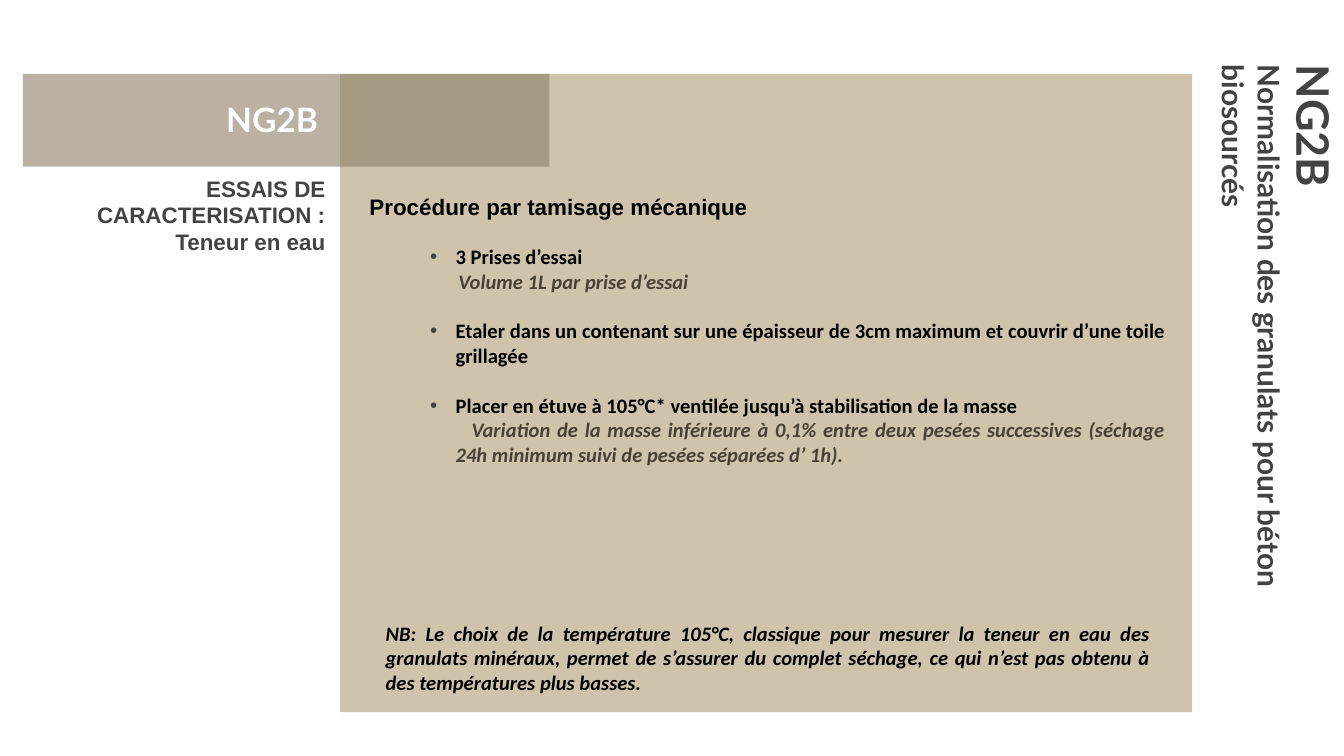
from collections import namedtuple
from dataclasses import dataclass

from lxml.etree import SubElement
from pptx import Presentation
from pptx.dml.color import RGBColor as Rgb
from pptx.enum.shapes import MSO_SHAPE as Shape
from pptx.enum.text import MSO_ANCHOR as Anchor, PP_ALIGN as Align
from pptx.oxml.ns import qn
from pptx.util import Pt

Box = namedtuple("Box", "left top width height")


@dataclass(frozen=True)
class Theme:
    panel: str = "CFC3AC"
    band: str = "908269"
    band_opacity: int = 62
    grey: str = "434343"
    detail: str = "484134"
    black: str = "000000"
    white: str = "FFFFFF"
    display: str = "Lato"
    heading: str = "Arial"
    body: str = "Calibri"
    title_size: int = 24
    band_size: int = 18
    subtitle_size: int = 16
    heading_size: int = 12
    body_size: int = 11


THEME = Theme()
LINE_GAP = 13.4
BULLET_MARGIN = 27.4
BULLET_HANG = 13.7

STEPS = [
    ("3 Prises d’essai", "Volume 1L par prise d’essai", 1.5),
    ("Etaler dans un contenant sur une épaisseur de 3cm maximum "
     "et couvrir d’une toile grillagée", None, 0),
    ("Placer en étuve à 105°C* ventilée jusqu’à stabilisation de la masse",
     "Variation de la masse inférieure à 0,1% entre deux pesées successives "
     "(séchage 24h minimum suivi de pesées séparées d’ 1h).", 8.5),
]
NOTE = ("NB: Le choix de la température 105°C, classique pour mesurer la teneur en eau "
        "des granulats minéraux, permet de s’assurer du complet séchage, ce qui n’est "
        "pas obtenu à des températures plus basses.")


def add_block(slide, box, color, opacity=100):
    block = slide.shapes.add_shape(Shape.RECTANGLE, *map(Pt, box))
    block.shadow.inherit = False
    block.fill.solid()
    block.fill.fore_color.rgb = Rgb.from_string(color)
    block.line.fill.background()
    if opacity < 100:
        srgb = block.fill._xPr.find(qn("a:solidFill"))[0]
        SubElement(srgb, qn("a:alpha"), val=str(opacity * 1000))


def add_text_area(slide, box, inset_x=7.2, inset_y=3.6, anchor=Anchor.TOP, wrap=True):
    area = slide.shapes.add_textbox(*map(Pt, box))
    frame = area.text_frame
    frame.word_wrap = wrap
    frame.vertical_anchor = anchor
    frame.margin_left = frame.margin_right = Pt(inset_x)
    frame.margin_top = frame.margin_bottom = Pt(inset_y)
    return area


def add_line(frame, text, font, size, color, align=Align.LEFT, italic=False,
             margin=0, indent=0, bullet=False, before=0):
    first = not frame.paragraphs[0].runs
    line = frame.paragraphs[0] if first else frame.add_paragraph()
    line.add_run().text = text
    line.alignment = align
    if before and not first:
        line.space_before = Pt(before)
    props = line._p.get_or_add_pPr()
    props.set("marL", str(Pt(margin)))
    props.set("indent", str(Pt(indent)))
    if bullet:
        bullet_color = SubElement(props, qn("a:buClr"))
        SubElement(bullet_color, qn("a:srgbClr"), val=THEME.grey)
        SubElement(props, qn("a:buFont"), typeface="Arial")
        SubElement(props, qn("a:buChar"), char="•")
    line.font.name = font
    line.font.size = Pt(size)
    line.font.bold = True
    line.font.italic = italic
    line.font.color.rgb = Rgb.from_string(color)


def add_side_title(slide, box):
    left = box.left + (box.width - box.height) / 2
    top = box.top + (box.height - box.width) / 2
    turned = Box(left, top, box.height, box.width)
    area = add_text_area(slide, turned, inset_y=0)
    area.rotation = 90
    add_line(area.text_frame, "NG2B", THEME.display, THEME.title_size, THEME.grey)
    add_line(area.text_frame, "Normalisation des granulats pour béton biosourcés",
             THEME.display, THEME.subtitle_size, THEME.grey)


def add_band(slide, box):
    add_block(slide, box, THEME.band, THEME.band_opacity)
    label = Box(box.left + 6.5, box.top + 6.5, 254.2, 35.3)
    frame = add_text_area(slide, label, inset_y=7.2, anchor=Anchor.MIDDLE).text_frame
    add_line(frame, "NG2B", THEME.display, THEME.band_size, THEME.white, Align.CENTER)


def add_topic(slide, box):
    frame = add_text_area(slide, box, inset_y=7.2).text_frame
    for text in ("ESSAIS DE CARACTERISATION :", "Teneur en eau"):
        add_line(frame, text, THEME.heading, THEME.heading_size, THEME.grey,
                 Align.RIGHT, margin=BULLET_HANG)


def add_steps(slide, box):
    frame = add_text_area(slide, box).text_frame
    for step, detail, detail_indent in STEPS:
        add_line(frame, step, THEME.body, THEME.body_size, THEME.black, Align.JUSTIFY,
                 margin=BULLET_MARGIN, indent=-BULLET_HANG, bullet=True, before=LINE_GAP)
        if detail:
            add_line(frame, detail, THEME.body, THEME.body_size, THEME.detail,
                     Align.JUSTIFY, italic=True, margin=BULLET_MARGIN, indent=detail_indent)


def add_procedure(slide, box):
    heading = Box(box.left - 5, box.top + 60.5, 236, 22)
    frame = add_text_area(slide, heading, wrap=False).text_frame
    add_line(frame, "Procédure par tamisage mécanique", THEME.heading,
             THEME.heading_size, THEME.black, margin=BULLET_HANG)

    add_steps(slide, Box(box.left + 27.4, box.top + 87.6, 422, 140))

    note = Box(box.left + 3.6, box.top + 289.4, 437.8, 47.5)
    frame = add_text_area(slide, note).text_frame
    add_line(frame, NOTE, THEME.body, THEME.body_size, THEME.black, Align.JUSTIFY,
             italic=True, margin=BULLET_HANG)


def main():
    deck = Presentation()
    deck.slide_width, deck.slide_height = Pt(720), Pt(405)
    slide = deck.slides.add_slide(deck.slide_layouts[6])
    panel = Box(182.2, 39.6, 456.5, 342)
    add_block(slide, panel, THEME.panel)
    add_side_title(slide, Box(651.3, 27.7, 67.2, 360))
    add_band(slide, Box(12.2, panel.top, 282.2, 49.7))
    add_topic(slide, Box(13.7, 86.4, 167.8, 64.8))
    add_procedure(slide, panel)
    deck.save("out.pptx")


if __name__ == "__main__":
    main()
